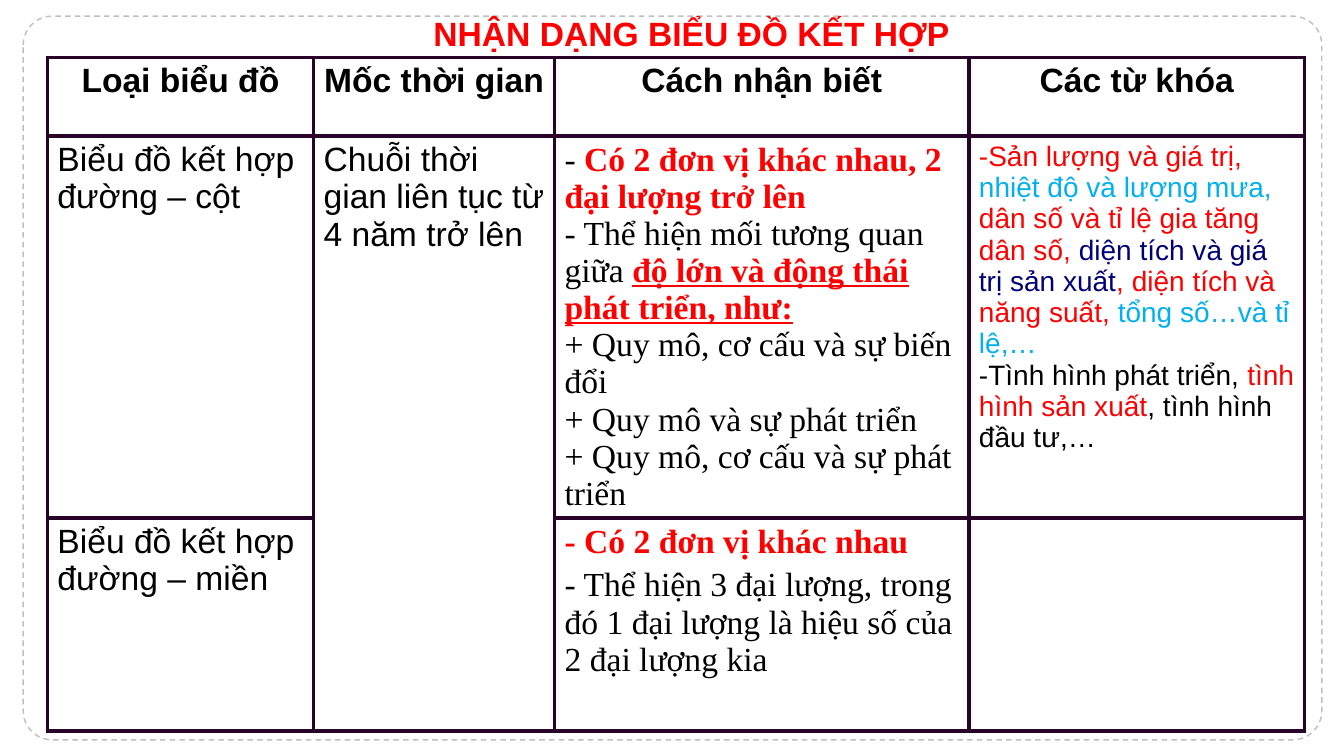
from lxml import etree
from pptx import Presentation
from pptx import util as u
from pptx.dml.color import RGBColor
from pptx.enum import dml, shapes, text
from pptx.oxml.ns import qn

COLOURS = {
    "black": "000000", "red": "FF0000", "sky": "00B0F0", "navy": "000078",
    "white": "FFFFFF", "border": "280228", "frame": "BFBFBF",
}
SANS = {"name": "Arial", "size": u.Pt(24)}
SERIF = {"name": "Times New Roman", "size": u.Pt(24)}
KEYWORD = {"name": "Arial", "size": u.Pt(20)}
BOLD = {"bold": True}
KEY_PHRASE = {"bold": True, "underline": True}

HEADINGS = ["Loại biểu đồ", "Mốc thời gian", "Cách nhận biết", "Các từ khóa"]
COLUMN_WIDTHS = [2.64, 2.39, 4.11, 3.33]
ROW_HEIGHTS = [0.78, 3.79, 2.11]

LINE_COLUMN_SIGNS = [
    [("- ", "black", {}), ("Có 2 đơn vị khác nhau, 2 đại lượng trở lên", "red", BOLD)],
    [("- Thể hiện mối tương quan giữa ", "black", {}),
     ("độ lớn và động thái phát triển, như:", "red", KEY_PHRASE)],
    [("+ Quy mô, cơ cấu và sự biến đổi", "black", {})],
    [("+ Quy mô và sự phát triển", "black", {})],
    [("+ Quy mô, cơ cấu và sự phát triển", "black", {})],
]
LINE_AREA_SIGNS = [
    [("- Có 2 đơn vị khác nhau", "red", BOLD)],
    [("- Thể hiện 3 đại lượng, trong đó 1 đại lượng là hiệu số của 2 đại lượng kia",
      "black", {})],
]
KEYWORDS = [
    [("-Sản lượng và giá trị, ", "red", {}),
     ("nhiệt độ và lượng mưa, ", "sky", {}),
     ("dân số và tỉ lệ gia tăng dân số, ", "red", {}),
     ("diện tích và giá trị sản xuất", "navy", {}),
     (", diện tích và năng suất, ", "red", {}),
     ("tổng số…và tỉ lệ,…", "sky", {})],
    [("-Tình hình phát triển, ", "black", {}),
     ("tình hình sản xuất", "red", {}),
     (", tình hình đầu tư,…", "black", {})],
]


def rgb(colour):
    """Return the named colour."""
    return RGBColor.from_string(COLOURS[colour])


def plain(words, colour="black", **emphasis):
    """Return one paragraph holding one run."""
    return [[(words, colour, emphasis)]]


def write(frame, paragraphs, base, align=text.PP_ALIGN.LEFT, gap=0):
    """Fill a text frame with paragraphs of (words, colour, emphasis) runs."""
    for index, runs in enumerate(paragraphs):
        paragraph = frame.add_paragraph() if index else frame.paragraphs[0]
        paragraph.alignment = align
        if index and gap:
            paragraph.space_before = u.Pt(gap)
        for words, colour, emphasis in runs:
            run = paragraph.add_run()
            run.text = words
            run.font.color.rgb = rgb(colour)
            for attribute, value in {"bold": False, **base, **emphasis}.items():
                setattr(run.font, attribute, value)


def dress_cell(cell):
    """Give a cell its four borders and white fill."""
    properties = cell._tc.get_or_add_tcPr()
    for side in ("a:lnL", "a:lnR", "a:lnT", "a:lnB"):
        border = etree.SubElement(properties, qn(side), w=str(u.Pt(3)))
        paint = etree.SubElement(border, qn("a:solidFill"))
        etree.SubElement(paint, qn("a:srgbClr"), val=COLOURS["border"])
    cell.fill.solid()
    cell.fill.fore_color.rgb = rgb("white")


def add_frame(slide, left, top, width, height):
    """Draw the dashed rounded frame."""
    frame = slide.shapes.add_shape(
        shapes.MSO_SHAPE.ROUNDED_RECTANGLE, *map(u.Inches, (left, top, width, height)))
    frame.adjustments[0] = 0.04
    frame.shadow.inherit = False
    frame.fill.background()
    frame.line.color.rgb = rgb("frame")
    for attribute, value in {"width": u.Pt(1), "dash_style": dml.MSO_LINE.DASH}.items():
        setattr(frame.line, attribute, value)


def add_title(slide, left, top, width, height):
    """Place the slide title."""
    title = slide.shapes.add_textbox(*map(u.Inches, (left, top, width, height)))
    title.text_frame.word_wrap = True
    write(title.text_frame, plain("NHẬN DẠNG BIỂU ĐỒ KẾT HỢP", "red", bold=True), SANS)


def add_chart_guide(slide, left, top, width, height):
    """Place the table that tells the combined charts apart."""
    guide = slide.shapes.add_table(
        len(ROW_HEIGHTS), len(COLUMN_WIDTHS),
        *map(u.Inches, (left, top, width, height))).table
    for attribute in ("first_row", "horz_banding"):
        setattr(guide, attribute, False)
    for column, column_width in zip(guide.columns, COLUMN_WIDTHS):
        column.width = u.Inches(column_width)
    for row, row_height in zip(guide.rows, ROW_HEIGHTS):
        row.height = u.Inches(row_height)
    for cell in guide.iter_cells():
        dress_cell(cell)
    guide.cell(1, 1).merge(guide.cell(2, 1))

    for column, heading in enumerate(HEADINGS):
        write(guide.cell(0, column).text_frame, plain(heading, bold=True), SANS,
              text.PP_ALIGN.CENTER)
    entries = {
        (1, 0): (plain("Biểu đồ kết hợp đường – cột"), SANS),
        (1, 1): (plain("Chuỗi thời gian liên tục từ 4 năm trở lên"), SANS),
        (1, 2): (LINE_COLUMN_SIGNS, SERIF),
        (1, 3): (KEYWORDS, KEYWORD),
        (2, 0): (plain("Biểu đồ kết hợp đường – miền"), SANS),
        (2, 2): (LINE_AREA_SIGNS, SERIF),
    }
    for (row, column), (paragraphs, base) in entries.items():
        write(guide.cell(row, column).text_frame, paragraphs, base,
              gap=4.8 if paragraphs is LINE_AREA_SIGNS else 0)


def main():
    """Build and save the slide."""
    deck = Presentation()
    deck.slide_width, deck.slide_height = u.Inches(13.33), u.Inches(7.5)
    slide = deck.slides.add_slide(deck.slide_layouts[6])
    add_frame(slide, 0.23, 0.16, 12.88, 7.18)
    add_chart_guide(slide, 0.47, 0.57, sum(COLUMN_WIDTHS), sum(ROW_HEIGHTS))
    add_title(slide, 4.2, 0.08, 5.8, 0.5)
    deck.save("out.pptx")


if __name__ == "__main__":
    main()
